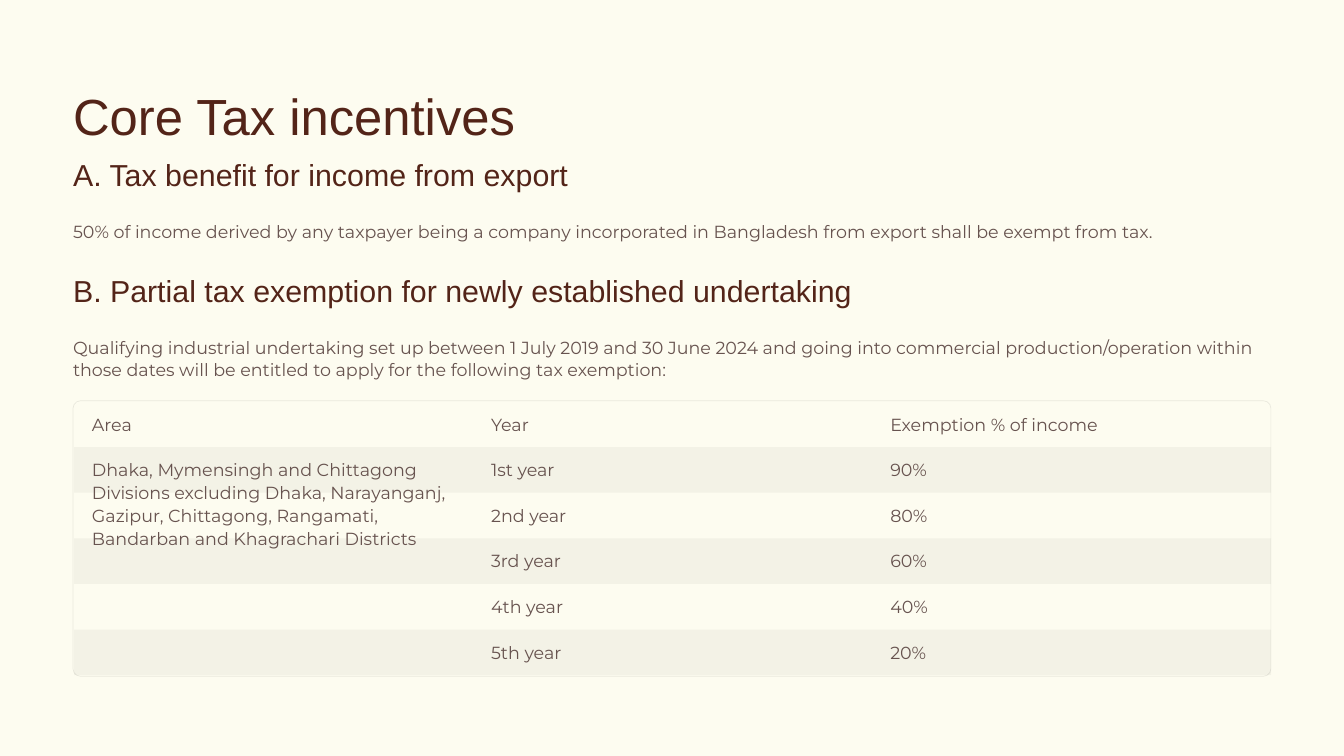
from pptx import Presentation
from pptx.dml.color import RGBColor
from pptx.enum.shapes import MSO_SHAPE
from pptx.oxml.ns import qn
from pptx.util import Cm, Pt
from lxml import etree

RECT = MSO_SHAPE.RECTANGLE
ROUND = MSO_SHAPE.ROUNDED_RECTANGLE
PLAIN = "{2D5ABB26-0587-4C30-8999-92F81FD0307C}"  # table style without grid

TITLE = {"name": "Arial", "size": Pt(43.5), "color": "532418", "lead": Pt(56.5)}
HEAD = {"name": "Arial", "size": Pt(26), "color": "532418", "lead": Pt(34)}
BODY = {"name": "Montserrat", "size": Pt(15), "color": "67534F", "lead": Pt(19.5)}

LEFT, WIDTH = 2.21, 36.22
TOP, ROW, COL = 12.14, 1.38, 12.07

AREA = ("Dhaka, Mymensingh and Chittagong Divisions excluding Dhaka, Narayanganj, "
        "Gazipur, Chittagong, Rangamati, Bandarban and Khagrachari Districts")
ROWS = [
    ("Area", "Year", "Exemption % of income"),
    (AREA, "1st year", "90%"),
    ("", "2nd year", "80%"),
    ("", "3rd year", "60%"),
    ("", "4th year", "40%"),
    ("", "5th year", "20%"),
]


def paint(fill, color, alpha=100):
    fill.solid()
    fill.fore_color.rgb = RGBColor.from_string(color)
    if alpha < 100:
        tint = fill._xPr.find(qn("a:solidFill"))[0]
        etree.SubElement(tint, qn("a:alpha")).set("val", str(alpha * 1000))


class Page:
    def __init__(self, deck, back):
        self.slide = deck.slides.add_slide(deck.slide_layouts[6])
        self.shapes = self.slide.shapes
        paint(self.slide.background.fill, back)

    def words(self, frame, text, style):
        para = frame.paragraphs[0]
        para.line_spacing = style["lead"]
        run = para.add_run()
        run.text = text
        for key in ("name", "size"):
            setattr(run.font, key, style[key])
        paint(run.font.fill, style["color"])

    def pad(self, item, left=0, top=0, right=0, bottom=0):
        gaps = {"left": left, "top": top, "right": right, "bottom": bottom}
        for side, gap in gaps.items():
            setattr(item, "margin_" + side, Cm(gap))

    def text(self, top, high, text, style):
        box = self.shapes.add_textbox(Cm(LEFT), Cm(top), Cm(WIDTH), Cm(high))
        frame = box.text_frame
        frame.word_wrap = True
        self.pad(frame)
        self.words(frame, text, style)

    def shape(self, kind, left, top, wide, high):
        item = self.shapes.add_shape(kind, Cm(left), Cm(top), Cm(wide), Cm(high))
        item.shadow.inherit = False
        return item

    def band(self, top, color):
        item = self.shape(RECT, 2.24, top, 36.2, ROW)
        paint(item.fill, color, 4)
        item.line.fill.background()

    def frame(self, top, high):
        item = self.shape(ROUND, LEFT, top, WIDTH, high)
        item.adjustments[0] = 0.027
        item.fill.background()
        item.line.width = Pt(0.6)
        paint(item.line.fill, "000000", 8)

    def table(self, rows):
        count = len(rows[0])
        grid = self.shapes.add_table(len(rows), count, Cm(2.24), Cm(TOP),
                                     Cm(COL * count), Cm(ROW * len(rows))).table
        grid.first_row = grid.horz_banding = False
        grid._tbl.tblPr.find(qn("a:tableStyleId")).text = PLAIN
        for col in grid.columns:
            col.width = Cm(COL)
        for r, row in enumerate(rows):
            grid.rows[r].height = Cm(ROW)
            for c, text in enumerate(row):
                cell = grid.cell(r, c)
                cell.fill.background()
                self.pad(cell, 0.54, 0.34, 0.54)
                self.words(cell.text_frame, text, BODY)
        # The area covers all five years
        grid.cell(1, 0).merge(grid.cell(len(rows) - 1, 0))


def main():
    deck = Presentation()
    deck.slide_width, deck.slide_height = Cm(40.64), Cm(22.86)
    page = Page(deck, "FDFCF0")

    # Title and the two sections
    page.text(2.41, 2.01, "Core Tax incentives", TITLE)
    page.text(4.62, 1.19, "A. Tax benefit for income from export", HEAD)
    page.text(6.63, 0.69, "50% of income derived by any taxpayer being a company "
              "incorporated in Bangladesh from export shall be exempt from tax.", BODY)
    page.text(8.13, 1.19, "B. Partial tax exemption for newly established undertaking", HEAD)
    page.text(10.13, 1.4, "Qualifying industrial undertaking set up between 1 July 2019 "
              "and 30 June 2024 and going into commercial production/operation within "
              "those dates will be entitled to apply for the following tax exemption:", BODY)

    # Outline and bands behind the table
    page.frame(12.12, 8.33)
    for r in range(len(ROWS)):
        page.band(TOP + r * ROW, "000000" if r % 2 else "FFFFFF")

    # Exemption by area and year
    page.table(ROWS)
    deck.save("out.pptx")


if __name__ == "__main__":
    main()
